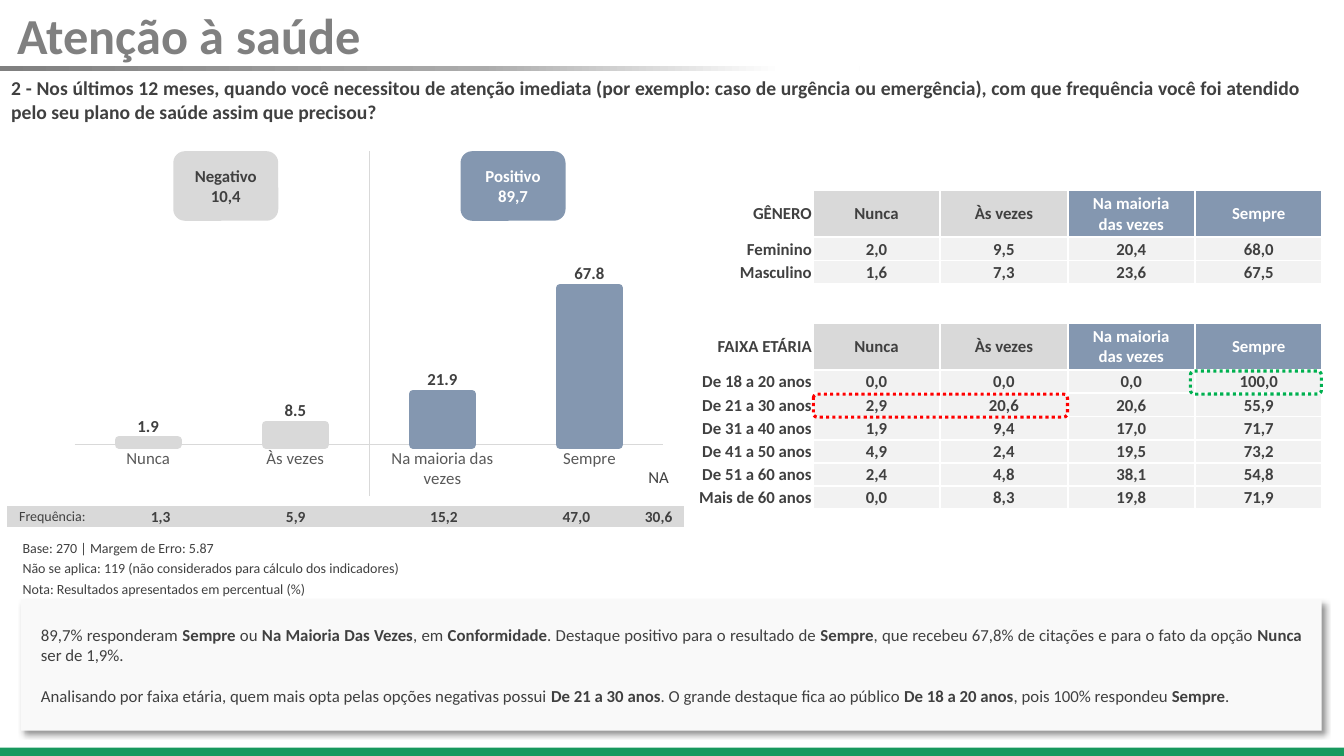
from copy import deepcopy
from lxml import etree
from pptx import Presentation
from pptx.chart.data import CategoryChartData
from pptx.dml.color import RGBColor
from pptx.enum.chart import XL_CHART_TYPE, XL_LABEL_POSITION, XL_TICK_MARK
from pptx.enum.dml import MSO_LINE
from pptx.enum.shapes import MSO_CONNECTOR, MSO_SHAPE
from pptx.enum.text import MSO_ANCHOR, PP_ALIGN
from pptx.oxml import parse_xml
from pptx.oxml.ns import nsdecls, qn
from pptx.util import Pt

LEFT, CENTER, RIGHT, JUSTIFY = PP_ALIGN.LEFT, PP_ALIGN.CENTER, PP_ALIGN.RIGHT, PP_ALIGN.JUSTIFY
TOP, MIDDLE = MSO_ANCHOR.TOP, MSO_ANCHOR.MIDDLE
RECTANGLE, ROUNDED = MSO_SHAPE.RECTANGLE, MSO_SHAPE.ROUNDED_RECTANGLE
DARK, GRAY, BLUE, PALE, WHITE = "404040", "D9D9D9", "8497B0", "F2F2F2", "FFFFFF"
NO_STYLE = "{2D5ABB26-0587-4C30-8999-92F81FD0307C}"
rgb = RGBColor.from_string

presentation = Presentation()
presentation.slide_width, presentation.slide_height = Pt(960), Pt(540)
slide = presentation.slides.add_slide(presentation.slide_layouts[6])
shapes = slide.shapes


def write(paragraph, text, size, color=DARK, bold=False, align=LEFT):
    paragraph.alignment = align
    font = paragraph.font
    font.name, font.size, font.bold = "Calibri", Pt(size), bold
    font.color.rgb = rgb(color)
    if not text:
        paragraph._p.get_or_add_endParaRPr().set("sz", str(size * 100))
    for index, part in enumerate(text.split("*")):
        for line_index, line in enumerate(part.split("\v")):
            if line_index:
                paragraph.add_line_break()
            if line:
                run = paragraph.add_run()
                run.text = line
                if index % 2:
                    run.font.bold = True


def add_table(left, top, widths, heights):
    frame = shapes.add_table(len(heights), len(widths), Pt(left), Pt(top),
                             Pt(sum(widths)), Pt(sum(heights)))
    table = frame.table
    table.first_row = table.horz_banding = False
    table._tbl.tblPr.find(qn("a:tableStyleId")).text = NO_STYLE
    for column, width in zip(table.columns, widths):
        column.width = Pt(width)
    for row, height in zip(table.rows, heights):
        row.height = Pt(height)
    for cell in table.iter_cells():
        cell.fill.background()
        cell.vertical_anchor = MIDDLE
        cell.margin_left = cell.margin_right = cell.margin_top = Pt(0.72)
        cell.margin_bottom = Pt(0)
    return table


title_rule = shapes.add_shape(RECTANGLE, Pt(0), Pt(47), Pt(614), Pt(3.5))
title_rule.shadow.inherit = False
title_rule.line.fill.background()
title_rule.fill.gradient()
title_rule.fill.gradient_angle = 0
stop_list = title_rule._element.spPr.find(".//" + qn("a:gsLst"))
stop_list.append(deepcopy(stop_list[0]))
for stop, (position, color) in zip(title_rule.fill.gradient_stops,
                                   [(0, "808080"), (0.56, "ABABAB"), (0.91, WHITE)]):
    stop.position = position
    stop.color.rgb = rgb(color)

footer = shapes.add_shape(RECTANGLE, Pt(0), Pt(534), Pt(960), Pt(6))
footer.shadow.inherit = False
footer.fill.solid()
footer.fill.fore_color.rgb = rgb("18995E")
footer.line.fill.background()

question = shapes.add_textbox(Pt(0), Pt(50.4), Pt(937.5), Pt(42)).text_frame
question.word_wrap = True
question.margin_left = question.margin_right = Pt(8)
question.margin_top = question.margin_bottom = Pt(4)
write(question.paragraphs[0],
      "2 - Nos últimos 12 meses, quando você necessitou de atenção imediata (por exemplo: caso de "
      "urgência ou emergência), com que frequência você foi atendido pelo seu plano de saúde assim "
      "que precisou?", 14, bold=True, align=JUSTIFY)

answers = ["Nunca", "Às vezes", "Na maioria\vdas vezes", "Sempre"]
profile_rows = [
    ["GÊNERO", *answers],
    ["Feminino", "2,0", "9,5", "20,4", "68,0"],
    ["Masculino", "1,6", "7,3", "23,6", "67,5"],
    [""] * 5,
    ["FAIXA ETÁRIA", *answers],
    ["De 18 a 20 anos", "0,0", "0,0", "0,0", "100,0"],
    ["De 21 a 30 anos", "2,9", "20,6", "20,6", "55,9"],
    ["De 31 a 40 anos", "1,9", "9,4", "17,0", "71,7"],
    ["De 41 a 50 anos", "4,9", "2,4", "19,5", "73,2"],
    ["De 51 a 60 anos", "2,4", "4,8", "38,1", "54,8"],
    ["Mais de 60 anos", "0,0", "8,3", "19,8", "71,9"],
]
header_rows, gap_row = (0, 4), 3
profile_heights = [33.8 if row in header_rows else 28.1 if row == gap_row else 16.55
                   for row in range(len(profile_rows))]
profile_table = add_table(489.6, 135.7, [91] * 5, profile_heights)
for row, texts in enumerate(profile_rows):
    for column, text in enumerate(texts):
        cell = profile_table.cell(row, column)
        blue_header = row in header_rows and column > 2
        write(cell.text_frame.paragraphs[0], text, 12, WHITE if blue_header else DARK, True,
              CENTER if column else RIGHT)
        if column and row != gap_row:
            cell.fill.solid()
            cell.fill.fore_color.rgb = rgb(
                BLUE if blue_header else GRAY if row in header_rows else PALE)
        properties = cell._tc.get_or_add_tcPr()
        for index, side in enumerate(("lnL", "lnR", "lnT", "lnB")):
            properties.insert(index, parse_xml(
                f'<a:{side} {nsdecls("a")} w="19050"><a:solidFill><a:srgbClr val="{WHITE}"/>'
                f'</a:solidFill></a:{side}>'))

for left, top, width, color in [(850.3, 265, 93.6, "00B050"), (581, 281.5, 181.5, "FF0000")]:
    highlight = shapes.add_shape(ROUNDED, Pt(left), Pt(top), Pt(width), Pt(16.5))
    highlight.shadow.inherit = False
    highlight.fill.background()
    highlight.line.color.rgb = rgb(color)
    highlight.line.width = Pt(2.25)
    highlight.line.dash_style = MSO_LINE.ROUND_DOT

analysis = shapes.add_shape(RECTANGLE, Pt(15), Pt(428.4), Pt(929), Pt(93.6))
analysis.shadow.inherit = False
analysis.fill.solid()
analysis.fill.fore_color.rgb = rgb("F9F9F9")
analysis.line.fill.background()
analysis._element.spPr.find(qn("a:effectLst")).append(parse_xml(
    f'<a:outerShdw {nsdecls("a")} blurRad="50800" dist="38100" dir="2700000" algn="tl" '
    'rotWithShape="0"><a:srgbClr val="000000"><a:alpha val="40000"/></a:srgbClr></a:outerShdw>'))
analysis_text = analysis.text_frame
analysis_text.word_wrap = True
analysis_text.vertical_anchor = MIDDLE
analysis_text.margin_left = analysis_text.margin_right = Pt(14.2)
analysis_text.margin_top = analysis_text.margin_bottom = Pt(2.8)
write(analysis_text.paragraphs[0],
      "89,7% responderam *Sempre* ou *Na Maioria Das Vezes*, em *Conformidade*. Destaque positivo "
      "para o resultado de *Sempre*, que recebeu 67,8% de citações e para o fato da opção "
      "*Nunca *ser de 1,9%.", 12, align=JUSTIFY)
age_paragraph = analysis_text.add_paragraph()
age_paragraph.space_before = Pt(14.6)
write(age_paragraph,
      "Analisando por faixa etária, quem mais opta pelas opções negativas possui *De 21 a 30 anos*. "
      "O grande destaque fica ao público *De 18 a 20 anos*, pois 100% respondeu *Sempre*.",
      12, align=JUSTIFY)

title = shapes.add_textbox(Pt(5.5), Pt(4.3), Pt(953), Pt(49)).text_frame
title.word_wrap = True
title.paragraphs[0].line_spacing = 0.9
write(title.paragraphs[0], "Atenção à saúde", 36, "808080", True)

notes_table = add_table(15.4, 383.8, [240, 48], [14.9] * 3)
notes_table.cell(1, 0).merge(notes_table.cell(1, 1))
for row, text in enumerate(["Base: 270 | Margem de Erro: 5.87",
                            "Não se aplica: 119 (não considerados para cálculo dos indicadores)",
                            "Nota: Resultados apresentados em percentual (%)"]):
    write(notes_table.cell(row, 0).text_frame.paragraphs[0], text, 10)
    write(notes_table.cell(row, 1).text_frame.paragraphs[0], "", 10)

chart_data = CategoryChartData(number_format="0.0")
chart_data.categories = [answer.replace("\v", " ") for answer in answers]
chart_data.add_series("Series 1", (1.9, 8.5, 21.9, 67.8))
chart = shapes.add_chart(XL_CHART_TYPE.COLUMN_CLUSTERED, Pt(44.6), Pt(150.5), Pt(437.8),
                         Pt(203.8), chart_data).chart
chart.has_legend = chart.has_title = False
chart.font.name, chart.font.size = "Calibri", Pt(10)
chart.font.color.rgb = rgb("000000")
value_axis, category_axis = chart.value_axis, chart.category_axis
value_axis.minimum_scale, value_axis.maximum_scale = 0, 100
value_axis.has_major_gridlines = value_axis.visible = False
category_axis.major_tick_mark = XL_TICK_MARK.NONE
category_axis.format.line.color.rgb = rgb(GRAY)
category_axis.format.line.width = Pt(0.75)
axis_font = category_axis.tick_labels.font
axis_font.name, axis_font.size = "Calibri", Pt(12)
axis_font.color.rgb = rgb("595959")
plot = chart.plots[0]
plot.gap_width, plot.overlap, plot.vary_by_categories = 150, -25, False
plot.has_data_labels = True
labels = plot.data_labels
labels.show_value = True
labels.position = XL_LABEL_POSITION.OUTSIDE_END
labels.number_format, labels.number_format_is_linked = "0.0", False
labels.font.name, labels.font.size, labels.font.bold = "Calibri", Pt(12), True
labels.font.color.rgb = rgb(DARK)
for index, color in enumerate([GRAY, GRAY, BLUE, BLUE]):
    bar = plot.series[0].points[index].format
    bar.fill.solid()
    bar.fill.fore_color.rgb = rgb(color)
    bar.line.color.rgb = rgb(color)
    bar.line.width = Pt(6)
    etree.SubElement(bar.line._get_or_add_ln(), qn("a:round"))
plot_area = chart._chartSpace.chart.plotArea
for old_layout in plot_area.findall(qn("c:layout")):
    plot_area.remove(old_layout)
plot_area.insert(0, parse_xml(
    f'<c:layout {nsdecls("c")}><c:manualLayout><c:layoutTarget val="inner"/>'
    '<c:xMode val="edge"/><c:yMode val="edge"/><c:x val="0.02"/><c:y val="0.01"/>'
    '<c:w val="0.96"/><c:h val="0.81"/></c:manualLayout></c:layout>'))

for left, name, total, fill, color in [(329, "Positivo", "89,7", BLUE, WHITE),
                                       (123.8, "Negativo", "10,4", GRAY, DARK)]:
    badge = shapes.add_shape(ROUNDED, Pt(left), Pt(108), Pt(75), Pt(49.7))
    badge.shadow.inherit = False
    badge.fill.solid()
    badge.fill.fore_color.rgb = rgb(fill)
    badge.line.fill.background()
    badge.text_frame.vertical_anchor = MIDDLE
    write(badge.text_frame.paragraphs[0], name, 12, color, True, CENTER)
    write(badge.text_frame.add_paragraph(), total, 12, color, True, CENTER)

divider = shapes.add_connector(MSO_CONNECTOR.STRAIGHT, Pt(263.5), Pt(108), Pt(263.5), Pt(354.2))
divider.line.color.rgb = rgb(GRAY)
divider.line.width = Pt(0.5)
etree.SubElement(divider._element.spPr, qn("a:effectLst"))

frequency_table = add_table(5, 333.4, [64.8, 90, 103, 108.7, 80.6, 36.9], [28, 15])
for column, text in enumerate(["Frequência:", "1,3", "5,9", "15,2", "47,0", "30,6"]):
    top_cell, cell = frequency_table.cell(0, column), frequency_table.cell(1, column)
    top_cell.vertical_anchor = TOP
    write(top_cell.text_frame.paragraphs[0], "NA" if column == 5 else "", 12, align=CENTER)
    write(cell.text_frame.paragraphs[0], text, 11 if column else 10, DARK, column > 0, CENTER)
    cell.fill.solid()
    cell.fill.fore_color.rgb = rgb(GRAY)

presentation.save("out.pptx")
